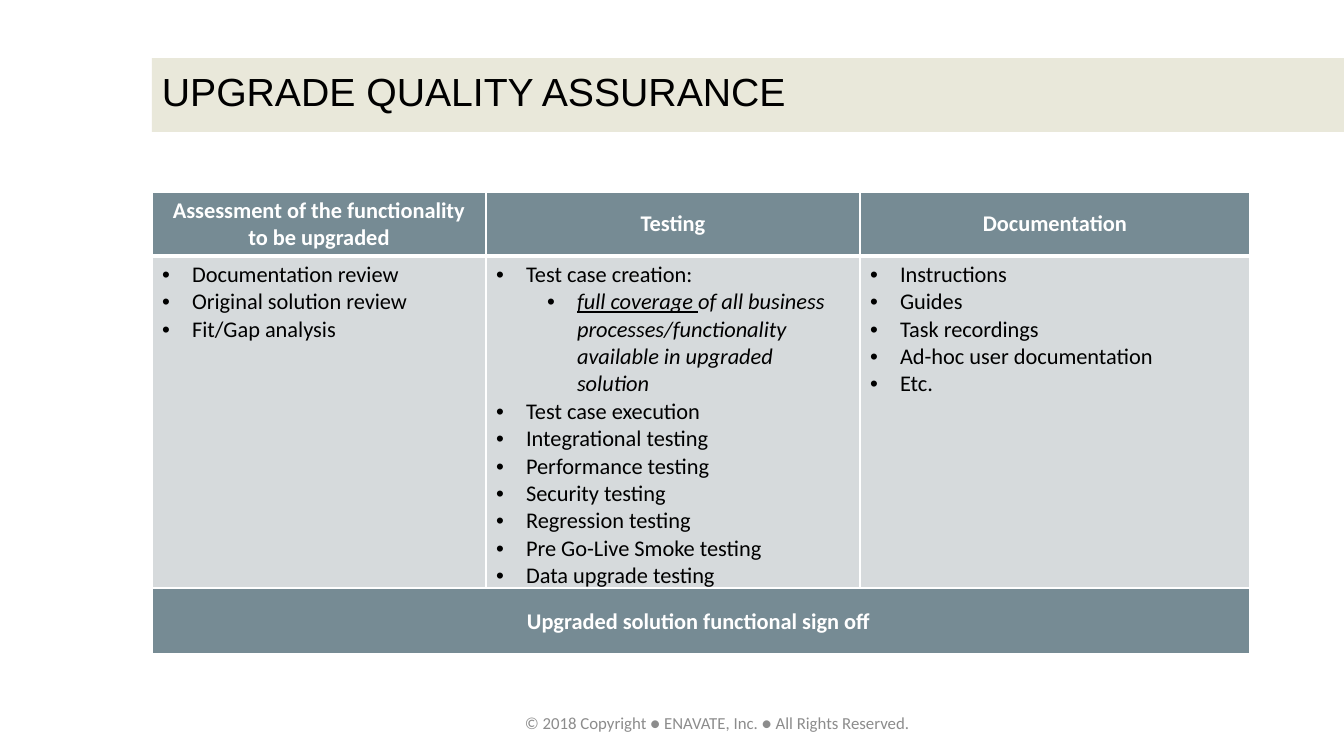
from lxml import etree
from pptx import Presentation
from pptx.dml.color import RGBColor
from pptx.enum.shapes import MSO_SHAPE
from pptx.enum.text import MSO_ANCHOR, PP_ALIGN
from pptx.oxml.ns import qn
from pptx.util import Emu, Pt

RECTANGLE = MSO_SHAPE.RECTANGLE
MIDDLE = MSO_ANCHOR.MIDDLE
TOP = MSO_ANCHOR.TOP
CENTER = PP_ALIGN.CENTER

EMU_PER_PX = 914400 / 100.8
WHITE, BLACK, GREY = "FFFFFF", "000000", "8C8C8C"
SLATE, PALE, BEIGE = "768B94", "D6DADC", "E1DFCB"
BULLET_INDENT = 30
BULLET_MARGINS = (30, 81)
COLUMN_WIDTHS = (334, 374, 390)

COLUMNS = (
    ("Assessment of the functionality to be upgraded",
     ("Documentation review", "Original solution review", "Fit/Gap analysis")),
    ("Testing",
     ("Test case creation:",
      ("full coverage ",
       "of all business processes/functionality available in upgraded solution"),
      "Test case execution", "Integrational testing", "Performance testing",
      "Security testing", "Regression testing", "Pre Go-Live Smoke testing",
      "Data upgrade testing")),
    ("Documentation",
     ("Instructions", "Guides", "Task recordings",
      "Ad-hoc user documentation", "Etc.")),
)


def px(length):
    """Turn whole pixels into EMU."""
    return Emu(round(length * EMU_PER_PX))


def color(value):
    """Turn a hex string into a colour."""
    return RGBColor.from_string(value)


def style_font(font, size, name, value, bold=False):
    """Set the size, family, colour and weight of a font."""
    font.size = Pt(size)
    font.name = name
    font.color.rgb = color(value)
    font.bold = bold


def add_band(slide, left, top, width, height, fill, opacity):
    """Add a borderless, partly transparent rectangle."""
    band = slide.shapes.add_shape(RECTANGLE, px(left), px(top), px(width), px(height))
    band.shadow.inherit = False
    band.line.fill.background()
    band.fill.solid()
    band.fill.fore_color.rgb = color(fill)
    fill_color = next(band.element.spPr.iter(qn("a:srgbClr")))
    etree.SubElement(fill_color, qn("a:alpha"), val=str(opacity * 1000))


def add_text(slide, left, top, width, height, text, size, name, value, wrap=True):
    """Add a single line of text and return its text frame."""
    box = slide.shapes.add_textbox(px(left), px(top), px(width), px(height))
    frame = box.text_frame
    frame.word_wrap = wrap
    frame.text = text
    style_font(frame.paragraphs[0].runs[0].font, size, name, value)
    return frame


def add_grid(slide, left, top, column_widths, row_heights):
    """Add an empty table with the given column widths and row heights."""
    table = slide.shapes.add_table(
        len(row_heights), len(column_widths), px(left), px(top),
        px(sum(column_widths)), px(sum(row_heights))).table
    for column, width in zip(table.columns, column_widths):
        column.width = px(width)
    for row, height in zip(table.rows, row_heights):
        row.height = px(height)
    return table


def style_cell(cell, fill, anchor, bottom_width):
    """Fill a cell, anchor its text and draw its white borders."""
    cell.fill.solid()
    cell.fill.fore_color.rgb = color(fill)
    cell.vertical_anchor = anchor
    properties = cell._tc.get_or_add_tcPr()
    widths = {"a:lnL": 1, "a:lnR": 1, "a:lnT": 1, "a:lnB": bottom_width}
    for position, (tag, width) in enumerate(widths.items()):
        border = etree.Element(qn(tag), w=str(Pt(width)))
        solid = etree.SubElement(border, qn("a:solidFill"))
        etree.SubElement(solid, qn("a:srgbClr"), val=WHITE)
        properties.insert(position, border)


def fill_heading(cell, text):
    """Write a bold centred heading on a dark cell."""
    style_cell(cell, SLATE, MIDDLE, 3)
    cell.text_frame.text = text
    paragraph = cell.text_frame.paragraphs[0]
    paragraph.alignment = CENTER
    style_font(paragraph.runs[0].font, 16, "Calibri", WHITE, bold=True)


def add_bullet(paragraph, level):
    """Give a paragraph a round bullet with a hanging indent."""
    properties = paragraph._p.get_or_add_pPr()
    properties.set("marL", str(px(BULLET_MARGINS[level])))
    properties.set("indent", str(-px(BULLET_INDENT)))
    etree.SubElement(properties, qn("a:buFont"), typeface="Arial")
    etree.SubElement(properties, qn("a:buChar"), char="•")


def fill_bullets(cell, items):
    """Write a bullet list; a tuple is a nested item with its lead underlined."""
    style_cell(cell, PALE, TOP, 1)
    frame = cell.text_frame
    for index, item in enumerate(items):
        paragraph = frame.add_paragraph() if index else frame.paragraphs[0]
        nested = isinstance(item, tuple)
        add_bullet(paragraph, int(nested))
        for text in item if nested else (item,):
            paragraph.add_run().text = text
        for run in paragraph.runs:
            style_font(run.font, 16, "Calibri", BLACK)
            run.font.italic = nested
        paragraph.runs[0].font.underline = nested


def main():
    """Build the slide and save it."""
    presentation = Presentation()
    presentation.slide_width, presentation.slide_height = px(1344), px(756)
    slide = presentation.slides.add_slide(presentation.slide_layouts[6])

    add_band(slide, 152, 58, 1192, 74, BEIGE, 70)
    add_text(slide, 515, 708, 409, 30,
             "© 2018 Copyright ● ENAVATE, Inc. ● All Rights Reserved.",
             12, "Calibri", GREY, wrap=False)
    title = add_text(slide, 152, 56, 1192, 76, "UPGRADE QUALITY ASSURANCE",
                     28, "Arial", BLACK)
    title.vertical_anchor = MIDDLE
    title.paragraphs[0].line_spacing = 0.9

    activities = add_grid(slide, 152, 192, COLUMN_WIDTHS, (64, 312))
    for index, (heading, items) in enumerate(COLUMNS):
        fill_heading(activities.cell(0, index), heading)
        fill_bullets(activities.cell(1, index), items)

    sign_off = add_grid(slide, 152, 588, (sum(COLUMN_WIDTHS),), (67,))
    fill_heading(sign_off.cell(0, 0), "Upgraded solution functional sign off ")

    presentation.save("out.pptx")


if __name__ == "__main__":
    main()
